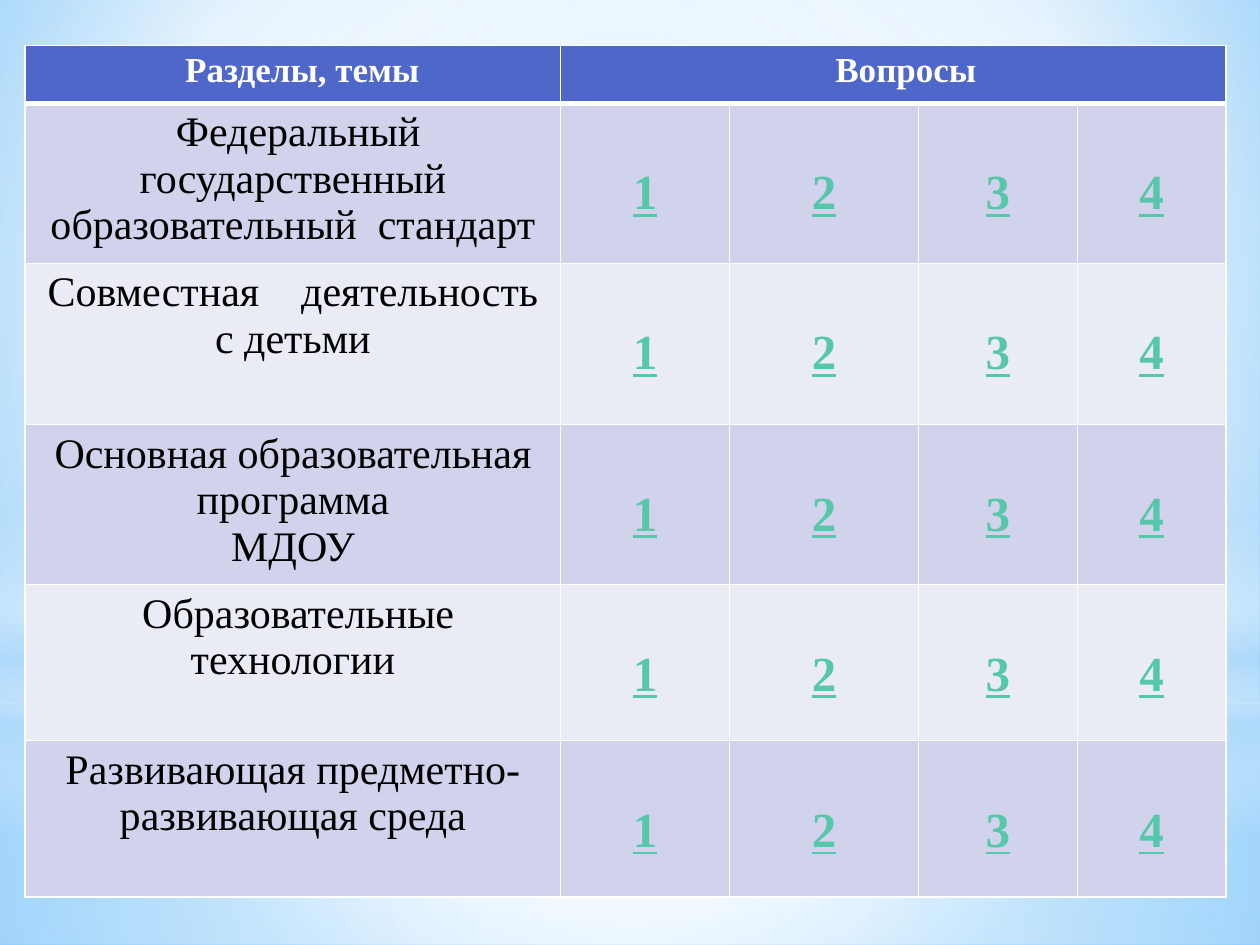
import pptx
import pptx.dml.color
import pptx.enum.shapes
import pptx.enum.text
import pptx.oxml
import pptx.oxml.ns
import pptx.util

Inches = pptx.util.Inches
Pt = pptx.util.Pt
SHAPE = pptx.enum.shapes.MSO_SHAPE
FONT = "Times New Roman"


def color(value):
    return pptx.dml.color.RGBColor.from_string(value)


def set_gradient(fill, owner, stops, focus):
    fill.gradient()
    gradient = owner.xpath(".//a:gradFill")[0]
    stop_xml = "".join(
        f'<a:gs pos="{place * 1000}"><a:srgbClr val="{value}">'
        f'<a:alpha val="{alpha * 1000}"/></a:srgbClr></a:gs>'
        for place, value, alpha in stops
    )
    if focus:
        left, top, right, bottom = [side * 1000 for side in focus]
        direction = (
            f'<a:path path="circle"><a:fillToRect l="{left}" t="{top}" '
            f'r="{right}" b="{bottom}"/></a:path>'
        )
    else:
        direction = '<a:lin ang="5400000" scaled="0"/>'
    gradient.getparent().replace(gradient, pptx.oxml.parse_xml(
        f'<a:gradFill {pptx.oxml.ns.nsdecls("a")} rotWithShape="1">'
        f'<a:gsLst>{stop_xml}</a:gsLst>{direction}</a:gradFill>'
    ))


deck = pptx.Presentation()
deck.slide_width = Inches(10)
deck.slide_height = Inches(7.5)
page = deck.slides.add_slide(deck.slide_layouts[6])

set_gradient(
    page.background.fill, page._element,
    [(0, "9ED5FF", 100), (60, "FFFFFF", 100), (100, "5BB9FF", 100)],
    (20, 10, 20, 60),
)

center = (50, 50, 50, 50)
glows = [
    (SHAPE.RECTANGLE, 5.58, 1.92, center,
     [(0, "FFFFFF", 91), (37, "FFFFFF", 76), (100, "B4DCFA", 79)]),
    (SHAPE.RECTANGLE, 0, 5.58, center,
     [(0, "FFFFFF", 89), (48, "FFFFFF", 62), (100, "B4DCFA", 79)]),
    (SHAPE.RECTANGLE, 4.12, 2.5, None,
     [(0, "FFFFFF", 0), (29, "FFFFFF", 30), (45, "B4DCFA", 40),
      (55, "FFFFFF", 26), (65, "B4DCFA", 60), (100, "FFFFFF", 0)]),
    (SHAPE.OVAL, 1.75, 5.58, center,
     [(0, "FFFFFF", 100), (56, "FFFFFF", 0)]),
]
for kind, top, height, focus, stops in glows:
    glow = page.shapes.add_shape(kind, 0, Inches(top), Inches(10), Inches(height))
    glow.shadow.inherit = False
    glow.line.fill.background()
    set_gradient(glow.fill, glow._element, stops, focus)

topics = [
    " Федеральный государственный образовательный  стандарт",
    "Совместная    деятельность с детьми",
    "Основная образовательная программа\nМДОУ",
    " Образовательные технологии",
    "Развивающая предметно- развивающая среда",
]
column_widths = [4.25, 1.34, 1.5, 1.26, 1.18]
row_heights = [0.46, 1.27, 1.28, 1.27, 1.24, 1.24]
table = page.shapes.add_table(
    len(row_heights), len(column_widths), Inches(0.2), Inches(0.36),
    Inches(sum(column_widths)), Inches(sum(row_heights)),
).table
for column, width in zip(table.columns, column_widths):
    column.width = Inches(width)
for row, height in zip(table.rows, row_heights):
    row.height = Inches(height)
table.cell(0, 1).merge(table.cell(0, 4))

rows = [["Разделы, темы", "Вопросы", "", "", ""]]
rows += [[topic, "1", "2", "3", "4"] for topic in topics]
for row_index, texts in enumerate(rows):
    for column_index, text in enumerate(texts):
        cell = table.cell(row_index, column_index)
        header = row_index == 0
        number = not header and column_index > 0
        if header:
            background, ink, size = "4E67C8", "FFFFFF", 20
            cell.margin_left = Inches(0.25 if column_index == 0 else 0.3)
        else:
            background = "D0D3EB" if row_index % 2 else "E9EBF5"
            ink, size = ("56C7AA", 28) if number else ("000000", 24)
        if number:
            cell.margin_top = Inches(0.5)
        cell.text = text
        for para in cell.text_frame.paragraphs:
            para.alignment = pptx.enum.text.PP_ALIGN.CENTER
            para.font.name = FONT
            para.font.size = Pt(size)
            para.font.bold = header or number
            para.font.underline = number
            para.font.color.rgb = color(ink)
        cell.fill.solid()
        cell.fill.fore_color.rgb = color(background)
        line_widths = {
            "L": 1, "R": 1,
            "T": 3 if row_index == 1 else 1,
            "B": 3 if header else 1,
        }
        properties = cell._tc.get_or_add_tcPr()
        for position, (side, width) in enumerate(line_widths.items()):
            properties.insert(position, pptx.oxml.parse_xml(
                f'<a:ln{side} {pptx.oxml.ns.nsdecls("a")} w="{Pt(width)}">'
                '<a:solidFill><a:srgbClr val="FFFFFF"/></a:solidFill>'
                f'</a:ln{side}>'
            ))

deck.save("out.pptx")
